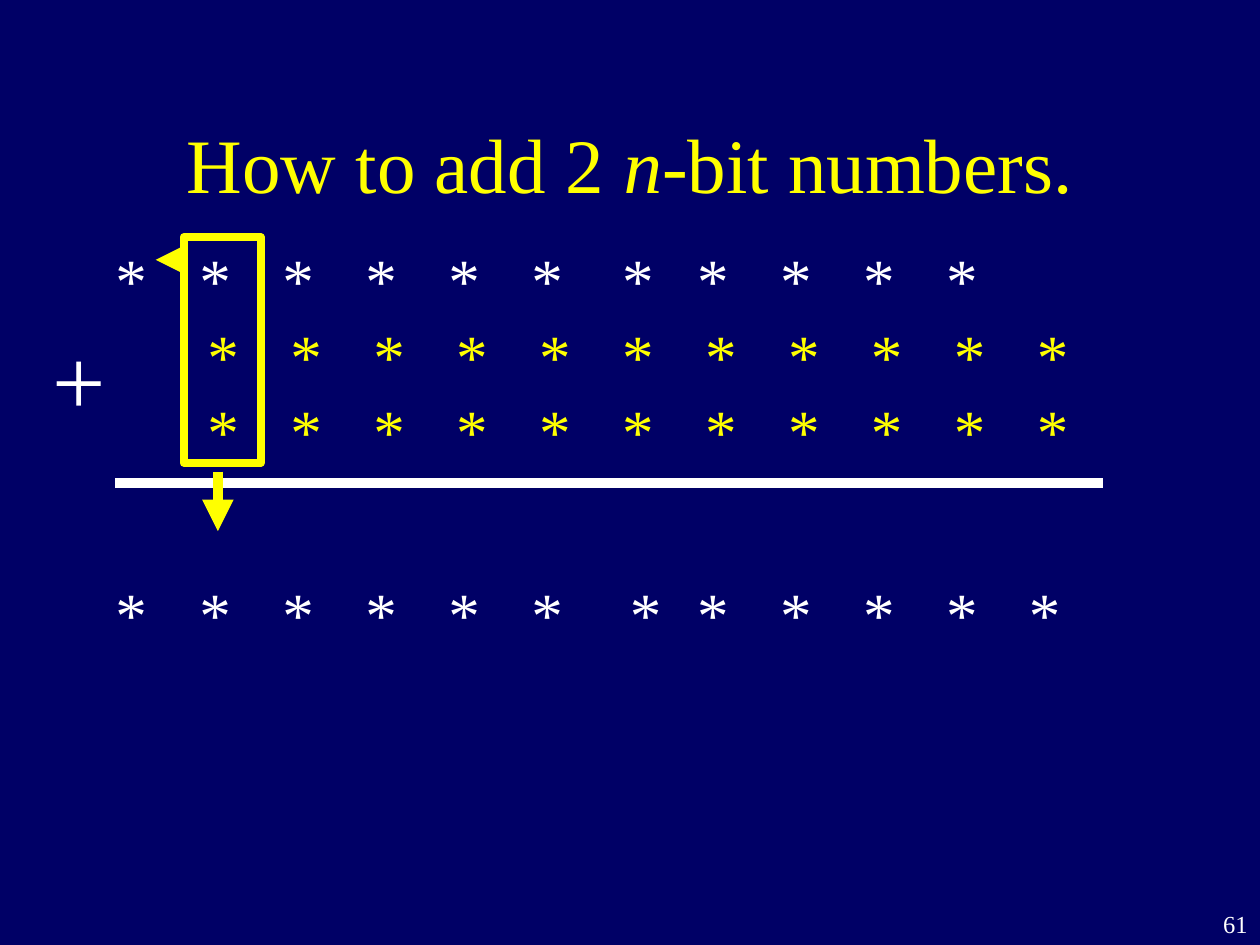
from dataclasses import dataclass

from lxml import etree
from pptx import Presentation
from pptx.dml.color import RGBColor
from pptx.enum.shapes import MSO_CONNECTOR, MSO_SHAPE
from pptx.enum.text import MSO_ANCHOR, PP_ALIGN
from pptx.oxml.ns import qn
from pptx.util import Pt

STRAIGHT = MSO_CONNECTOR.STRAIGHT
RECTANGLE = MSO_SHAPE.RECTANGLE
TOP, MIDDLE = MSO_ANCHOR.TOP, MSO_ANCHOR.MIDDLE
CENTER, RIGHT = PP_ALIGN.CENTER, PP_ALIGN.RIGHT
TITLE_ONLY = 5


@dataclass(frozen=True)
class Theme:
    background = RGBColor(0x00, 0x00, 0x66)
    plain = RGBColor(0xFF, 0xFF, 0xFF)
    accent = RGBColor(0xFF, 0xFF, 0x00)
    font = "Times New Roman"
    title_size = 44
    digit_size = 36
    plus_size = 54
    number_size = 14
    heavy_line = 6
    frame_line = 4.5


THEME = Theme()

# Rows of the sum, as distances below the carry row
LINE_HEIGHT = 43.1
CARRY, FIRST, SECOND, SUM = 0, LINE_HEIGHT, 2 * LINE_HEIGHT, 190.9
COLUMN_COUNT = 11
COLUMN_STEP = 47.4
COLUMN_WIDTH = 123
SIDE_INSET = 21.6


def style(para, size, color, align):
    para.alignment = align
    para.font.name = THEME.font
    para.font.size = Pt(size)
    para.font.color.rgb = color


def add_text_frame(page, left, top, width, height, side_inset, anchor):
    box = page.shapes.add_textbox(Pt(left), Pt(top), Pt(width), Pt(height))
    frame = box.text_frame
    frame.word_wrap = True
    frame.vertical_anchor = anchor
    frame.margin_left = frame.margin_right = Pt(side_inset)
    return frame


def add_label(page, box, text, size, align, side_inset, anchor):
    frame = add_text_frame(page, *box, side_inset, anchor)
    para = frame.paragraphs[0]
    para.text = text
    style(para, size, THEME.plain, align)


def add_line(page, start, end, color, arrow=False):
    line = page.shapes.add_connector(STRAIGHT, *map(Pt, start + end))
    line.line.color.rgb = color
    line.line.width = Pt(THEME.heavy_line)
    if arrow:
        etree.SubElement(line.line._get_or_add_ln(), qn("a:tailEnd"), type="triangle")
    etree.SubElement(line._element.spPr, qn("a:effectLst"))


def add_title(page, left, top, width, height):
    title = page.shapes.title
    title.left, title.top, title.width, title.height = map(Pt, (left, top, width, height))
    title.text_frame.vertical_anchor = MIDDLE
    para = title.text_frame.paragraphs[0]
    for text in ("How to add 2 ", "n", "-bit numbers."):
        span = para.add_run()
        span.text = text
        if text == "n":
            span.font.italic = True
    style(para, THEME.title_size, THEME.accent, CENTER)


def add_column(page, left, top, height, digits):
    """Place one column of (row, text) digits; the summands are accented."""
    frame = add_text_frame(page, left, top, COLUMN_WIDTH, height, SIDE_INSET, TOP)
    frame.margin_top = Pt(5.7 + digits[0][0])
    below = digits[0][0]
    for index, (row, text) in enumerate(digits):
        para = frame.add_paragraph() if index else frame.paragraphs[0]
        para.text = text
        style(para, THEME.digit_size,
              THEME.accent if row in (FIRST, SECOND) else THEME.plain, CENTER)
        para.line_spacing = Pt(LINE_HEIGHT)
        para.space_before = Pt(round(row - below, 2))
        below = row + LINE_HEIGHT


def add_highlight(page, left, top, width, height):
    # Frame around the column being added
    frame = page.shapes.add_shape(RECTANGLE, Pt(left), Pt(top), Pt(width), Pt(height))
    frame.shadow.inherit = False
    frame.fill.background()
    frame.line.color.rgb = THEME.accent
    frame.line.width = Pt(THEME.frame_line)

    # Arrows to the sum digit and to the next carry
    down_x, carry_y = left + 19.5, top + 13
    add_line(page, (down_x, top + height + 5), (down_x, top + height + 39), THEME.accent, True)
    add_line(page, (left - 1.5, carry_y), (left - 16, carry_y), THEME.accent, True)


def add_addition(page, left, top, width, height):
    # Eleven digit columns, then the overflow column on the far left
    first_column = left + 48
    for index in range(COLUMN_COUNT):
        carry = "*" if index == 5 else "* "
        total = " *" if index == 5 else "* "
        digits = [(CARRY, carry), (FIRST, "*"), (SECOND, "*"), (SUM, total)]
        if index == COLUMN_COUNT - 1:
            digits = digits[1:]
        add_column(page, first_column + index * COLUMN_STEP, top, height, digits)
    add_column(page, left, top, height, [(CARRY, "* "), (SUM, "* ")])

    # Rule above the result and the plus sign
    rule_y = top + 144
    add_line(page, (first_column, rule_y), (left + width, rule_y), THEME.plain)
    add_label(page, (left, top + 48, 54, 72), "+", THEME.plus_size, CENTER, 0, MIDDLE)

    add_highlight(page, left + 87, top + 3.5, 44, 129)


def main():
    deck = Presentation()
    deck.slide_width, deck.slide_height = Pt(720), Pt(540)
    page = deck.slides.add_slide(deck.slide_layouts[TITLE_ONLY])
    page.background.fill.solid()
    page.background.fill.fore_color.rgb = THEME.background

    add_title(page, 54, 48, 612, 90)
    add_addition(page, 18, 132, 612, 288.7)
    add_label(page, (684, 516, 36, 24), "61", THEME.number_size, RIGHT, 7.2, TOP)
    deck.save("out.pptx")


if __name__ == "__main__":
    main()
